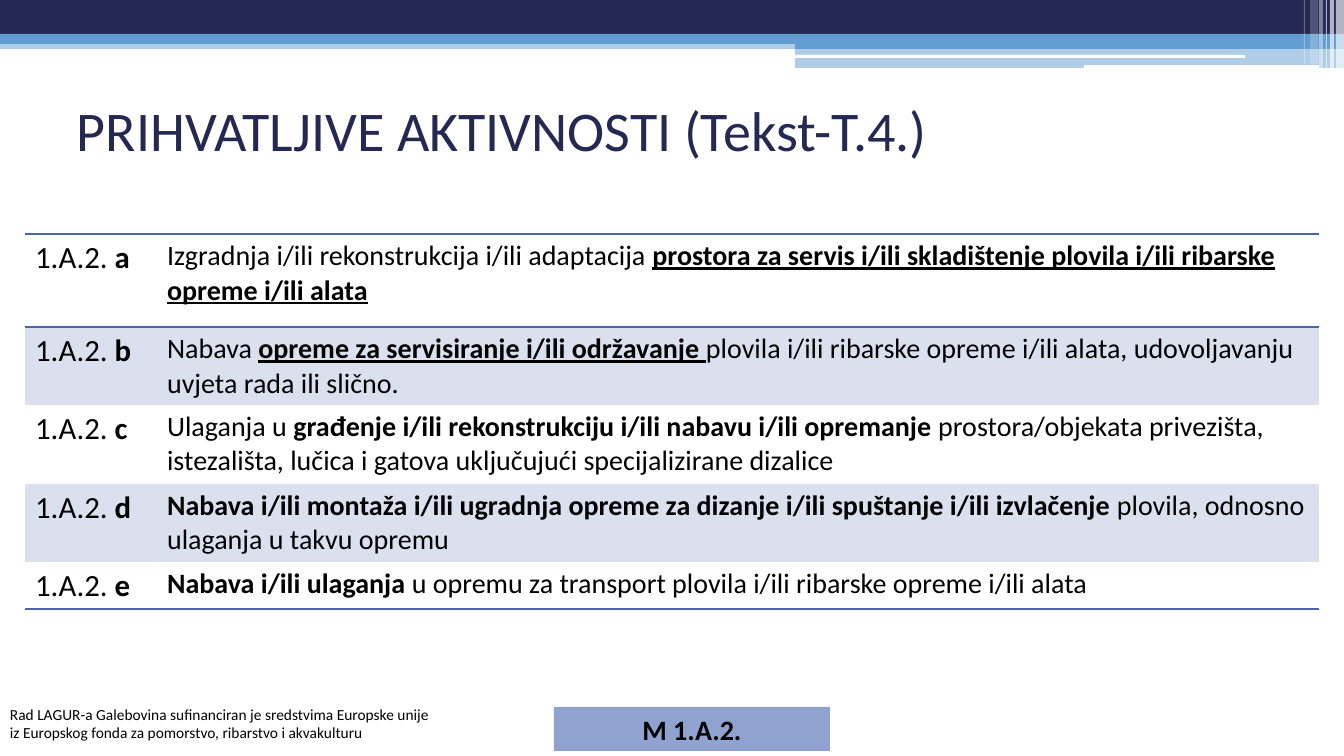
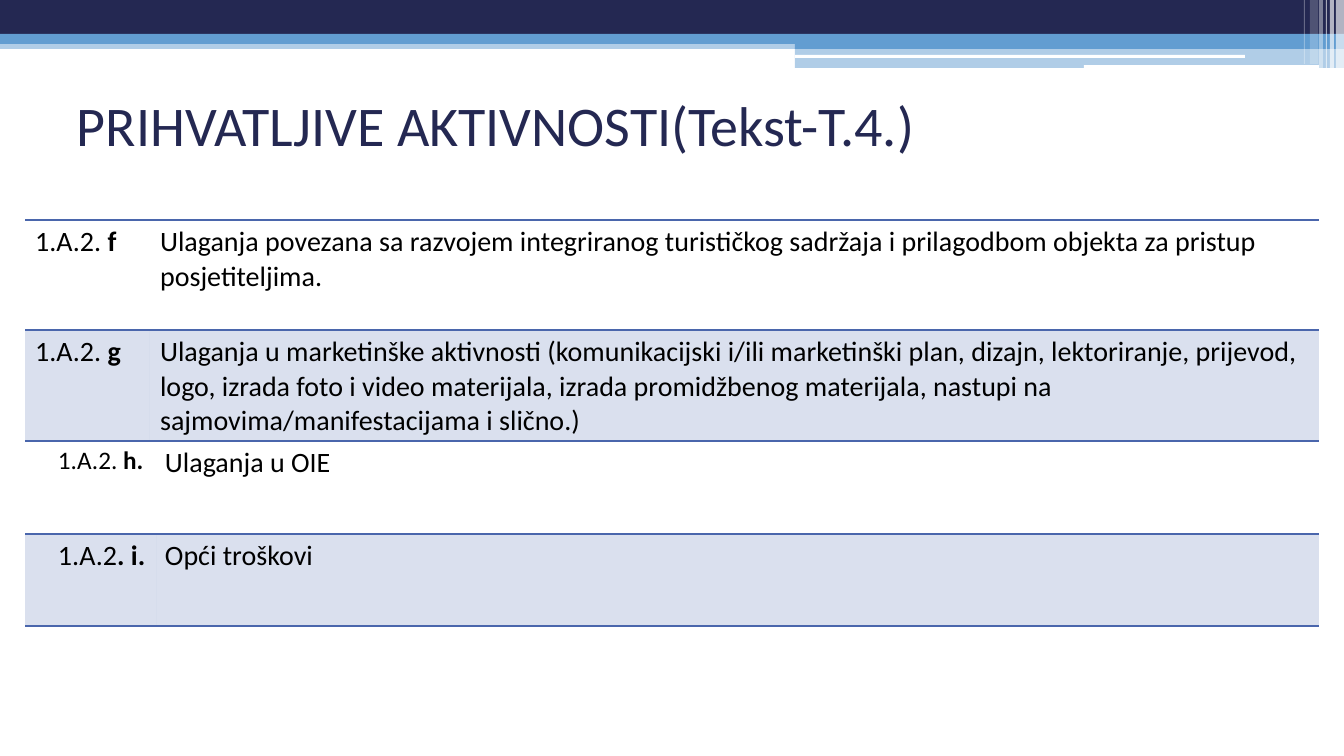
from collections import namedtuple

from lxml.etree import SubElement
from pptx import Presentation
from pptx.dml.color import RGBColor
from pptx.enum.shapes import MSO_SHAPE
from pptx.enum.text import MSO_ANCHOR, PP_ALIGN
from pptx.oxml import parse_xml
from pptx.oxml.ns import nsdecls, qn
from pptx.util import Pt

EMU_PER_PX = 914400 / 100.8
FONT = "Calibri"
NAVY = RGBColor(0x24, 0x28, 0x52)
SKY = RGBColor(0x62, 0x9D, 0xD1)
RULE = RGBColor(0x4A, 0x66, 0xAC)
PERIWINKLE = RGBColor(0x90, 0xA2, 0xCF)
WHITE = RGBColor(0xFF, 0xFF, 0xFF)
BLACK = RGBColor(0, 0, 0)
PLAIN_TABLE = "{2D5ABB26-0587-4C30-8999-92F81FD0307C}"

Box = namedtuple("Box", "left top width height")
SLIDE = Box(0, 0, 1344, 756)
TITLE = Box(67, 70, 1210, 118)
FOOTER = Box(0, 700, 672, 50)
MEASURE = Box(554, 707, 276, 44)

RUN_FORMATS = {
    "plain": {"bold": False},
    "bold": {"bold": True},
    "key": {"bold": True, "underline": True},
}
INSET_CELL = {"margin_left": 8, "margin_right": 7, "margin_top": 0, "margin_bottom": 0}
LIST_PARAGRAPH = {"line_spacing": 1.15, "space_after": Pt(2.4)}

BANDS = [
    (Box(0, 40, 1344, 9), SKY, 50),
    (Box(0, 0, 1344, 34), NAVY, 100),
    (Box(0, 34, 1344, 10), SKY, 100),
    (Box(795, 39, 549, 10), SKY, 100),
    (Box(795, 48, 549, 20), SKY, 50),
    (Box(795, 55, 450, 3), WHITE, 100),
    (Box(1084, 65, 235, 4), WHITE, 100),
    (Box(1336, 0, 8, 68), WHITE, 65),
    (Box(1330, 0, 4, 68), WHITE, 65),
    (Box(1326, 0, 1, 68), WHITE, 60),
    (Box(1319, 0, 4, 68), WHITE, 40),
    (Box(1310, 0, 8, 64), WHITE, 20),
    (Box(1304, 0, 1, 64), WHITE, 30),
]

BUILDING_ACTIVITIES = [
    ("a", [("Izgradnja i/ili rekonstrukcija i/ili adaptacija ", "plain"),
           ("prostora za servis i/ili skladištenje plovila i/ili ribarske opreme i/ili alata", "key")]),
    ("b", [("Nabava ", "plain"),
           ("opreme za servisiranje i/ili održavanje ", "key"),
           ("plovila i/ili ribarske opreme i/ili alata, udovoljavanju uvjeta rada ili slično.", "plain")]),
    ("c", [("Ulaganja u ", "plain"),
           ("građenje i/ili rekonstrukciju i/ili nabavu i/ili opremanje ", "bold"),
           ("prostora/objekata privezišta, istezališta, lučica i gatova uključujući "
            "specijalizirane dizalice", "plain")]),
    ("d", [("Nabava i/ili montaža i/ili ugradnja opreme za dizanje i/ili spuštanje "
            "i/ili izvlačenje ", "bold"),
           ("plovila, odnosno ulaganja u takvu opremu", "plain")]),
    ("e", [("Nabava i/ili ulaganja ", "bold"),
           ("u opremu za transport plovila i/ili ribarske opreme i/ili alata", "plain")]),
]
PROMOTION_ACTIVITIES = [
    ("f", [("Ulaganja povezana sa razvojem integriranog turističkog sadržaja i prilagodbom "
            "objekta za pristup posjetiteljima.", "plain")]),
    ("g", [("Ulaganja u marketinške aktivnosti (komunikacijski i/ili marketinški plan, dizajn, "
            "lektoriranje, prijevod, logo, izrada foto i video materijala, izrada promidžbenog "
            "materijala, nastupi na sajmovima/manifestacijama i slično.)", "plain")]),
]
GENERAL_ACTIVITIES = [
    ([("1.A.2. ", "plain"), ("h.", "bold")], [("Ulaganja u OIE", "plain")]),
    ([("1.A.2", "plain"), (". i.", "bold")], [("Opći troškovi", "plain")]),
]


def px(length):
    return round(length * EMU_PER_PX)


def emu(box):
    return [px(length) for length in box]


def set_all(target, values):
    for name, value in values.items():
        setattr(target, name, value)


def write_runs(paragraph, runs, size, color=BLACK):
    for text, style in runs:
        run = paragraph.add_run()
        run.text = text
        set_all(run.font, {"name": FONT, "size": Pt(size), **RUN_FORMATS[style]})
        run.font.color.rgb = color


def set_opacity(properties, percent):
    tint = properties.find(qn("a:solidFill")).find(qn("a:srgbClr"))
    SubElement(tint, qn("a:alpha"), val=str(percent * 1000))


def add_block(slide, box, color, opacity=100):
    block = slide.shapes.add_shape(MSO_SHAPE.RECTANGLE, *emu(box))
    block.shadow.inherit = False
    block.line.fill.background()
    block.fill.solid()
    block.fill.fore_color.rgb = color
    if opacity < 100:
        set_opacity(block._element.spPr, opacity)
    return block


def add_text(slide, box, lines, size, color=BLACK, anchor=MSO_ANCHOR.TOP):
    frame = slide.shapes.add_textbox(*emu(box)).text_frame
    set_all(frame, {"word_wrap": True, "vertical_anchor": anchor})
    for number, line in enumerate(lines):
        paragraph = frame.add_paragraph() if number else frame.paragraphs[0]
        write_runs(paragraph, [(line, "plain")], size, color)


def add_header(slide, title, box):
    for band, color, opacity in BANDS:
        add_block(slide, band, color, opacity)
    add_text(slide, box, [title], 40, NAVY, MSO_ANCHOR.MIDDLE)


def add_footer(slide, note_box, measure_box):
    add_text(slide, note_box, [
        "Rad LAGUR-a Galebovina sufinanciran je sredstvima Europske unije",
        "iz Europskog fonda za pomorstvo, ribarstvo i akvakulturu",
    ], 11)
    frame = add_block(slide, measure_box, PERIWINKLE).text_frame
    frame.vertical_anchor = MSO_ANCHOR.MIDDLE
    frame.paragraphs[0].alignment = PP_ALIGN.CENTER
    write_runs(frame.paragraphs[0], [("M 1.A.2.", "bold")], 20)


def rule_cell(cell, sides):
    properties = cell._tc.get_or_add_tcPr()
    for position, side in enumerate(sides):
        properties.insert(position, parse_xml(
            f'<a:ln{side} {nsdecls("a")} w="{Pt(1)}"><a:solidFill>'
            f'<a:srgbClr val="{RULE}"/></a:solidFill></a:ln{side}>'))


def shade_cell(cell):
    cell.fill.solid()
    cell.fill.fore_color.rgb = RULE
    set_opacity(cell._tc.tcPr, 20)


def indent_cell(cell, left):
    set_all(cell, {name: px(margin) for name, margin in INSET_CELL.items()})
    paragraph = cell.text_frame.paragraphs[0]
    set_all(paragraph, LIST_PARAGRAPH)
    properties = paragraph._p.get_or_add_pPr()
    properties.set("marL", str(px(left)))
    properties.set("indent", str(px(-25)))


def add_activities(slide, origin, code_width, heights, rows, code_sizes, rules, indents=None):
    left, top = origin
    widths = [code_width, 1294 - code_width]
    frame = slide.shapes.add_table(len(rows), 2, *emu((left, top, sum(widths), sum(heights))))
    table = frame.table
    set_all(table, {"first_row": False, "horz_banding": False})
    table._tbl.tblPr.find(qn("a:tableStyleId")).text = PLAIN_TABLE
    for column, width in zip(table.columns, widths):
        column.width = px(width)
    for number, (code, activity) in enumerate(rows):
        table.rows[number].height = px(heights[number])
        for index, (runs, size) in enumerate([(code, code_sizes[number]), (activity, 20)]):
            cell = table.cell(number, index)
            write_runs(cell.text_frame.paragraphs[0], runs, size)
            if indents:
                indent_cell(cell, indents[index])
            if number % 2:
                shade_cell(cell)
            else:
                cell.fill.background()
            rule_cell(cell, rules[number])


def with_codes(activities):
    return [([("1.A.2. ", "plain"), (letter, "bold")], runs) for letter, runs in activities]


def build_first(slide):
    add_header(slide, "PRIHVATLJIVE AKTIVNOSTI (Tekst-T.4.)", TITLE)
    add_activities(slide, (25, 234), 132, [93, 78, 79, 78, 47],
                   with_codes(BUILDING_ACTIVITIES), [22] * 5, ["TB", "", "", "", "B"])
    add_footer(slide, FOOTER, MEASURE)


def build_second(slide):
    add_header(slide, "PRIHVATLJIVE AKTIVNOSTI(Tekst-T.4.)", TITLE._replace(top=65))
    add_activities(slide, (25, 220), 125, [110, 111],
                   with_codes(PROMOTION_ACTIVITIES), [20, 20], ["TB", "TB"])
    add_activities(slide, (25, 441), 132, [93, 92],
                   GENERAL_ACTIVITIES, [18, 20], ["TB", "TB"], indents=[50, 25])


def main():
    deck = Presentation()
    set_all(deck, {"slide_width": px(SLIDE.width), "slide_height": px(SLIDE.height)})
    for build in (build_first, build_second):
        build(deck.slides.add_slide(deck.slide_layouts[6]))
    deck.save("out.pptx")


if __name__ == "__main__":
    main()
